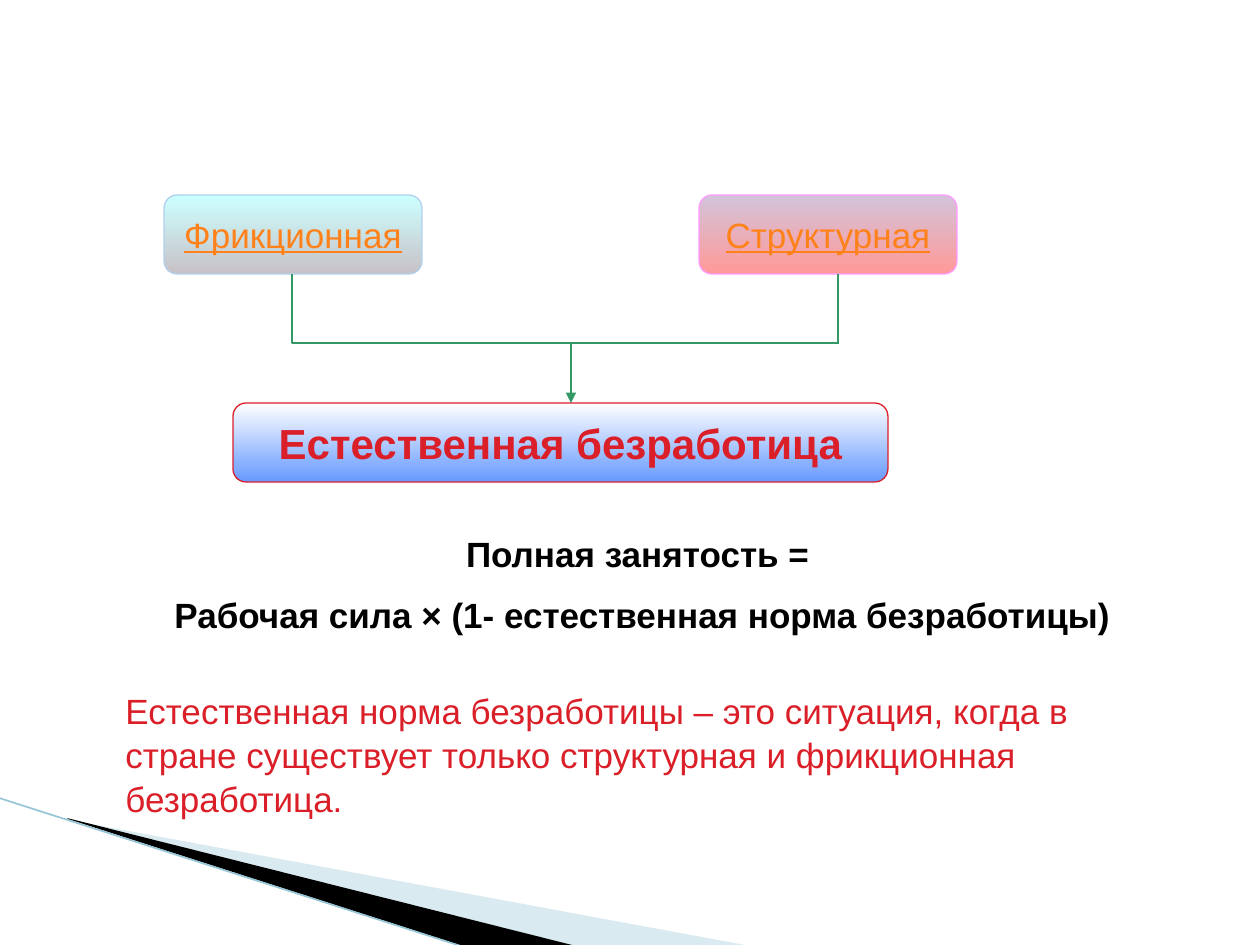
from lxml import etree
from pptx import Presentation
from pptx.dml.color import RGBColor
from pptx.enum.shapes import MSO_CONNECTOR as CONN, MSO_SHAPE as SHAPE
from pptx.enum.text import MSO_ANCHOR as ANCHOR, MSO_AUTO_SIZE as AUTO, PP_ALIGN as ALIGN
from pptx.oxml.ns import qn
from pptx.util import Emu, Pt

SCALE = 914400 / 126
BLACK = RGBColor(0x00, 0x00, 0x00)
WHITE = RGBColor(0xFF, 0xFF, 0xFF)
RED = RGBColor(0xDA, 0x1F, 0x28)
ORANGE = RGBColor(0xFF, 0x81, 0x19)
GREEN = RGBColor(0x33, 0x99, 0x66)
PALE_BLUE = RGBColor(0xA0, 0xCB, 0xDC)
EDGE_BLUE = RGBColor(0x97, 0xC5, 0xD8)
CYAN = RGBColor(0xCC, 0xFF, 0xFF)
GREY = RGBColor(0xC8, 0xC2, 0xC7)
SKY = RGBColor(0xB0, 0xD0, 0xEE)
LILAC = RGBColor(0xD3, 0xC4, 0xDA)
SALMON = RGBColor(0xFF, 0x99, 0x99)
PINK = RGBColor(0xFF, 0x99, 0xFF)
BLUE = RGBColor(0x66, 0x99, 0xFF)


def px(*lengths):
    return [Emu(round(n * SCALE)) for n in lengths]


class Deck:
    """Holds the text style and the current slide, and draws each kind of element."""

    font = "Arial"

    def __init__(self, width, height):
        self.prs = Presentation()
        self.prs.slide_width, self.prs.slide_height = px(width, height)
        self.s = self.prs.slides.add_slide(self.prs.slide_layouts[6])

    def run(self, p, text, color, size=20, bold=False, underline=False):
        r = p.add_run()
        r.text = text
        f = r.font
        f.name, f.size, f.bold, f.underline = self.font, Pt(size), bold, underline
        f.color.rgb = color

    def polygon(self, points, color, alpha=None):
        builder = self.s.shapes.build_freeform(*points[0], scale=SCALE)
        builder.add_line_segments(points[1:], close=True)
        sp = builder.convert_to_shape()
        sp.shadow.inherit = False
        sp.fill.solid()
        sp.fill.fore_color.rgb = color
        sp.line.fill.background()
        if alpha:
            clr = sp._element.spPr.find(".//" + qn("a:srgbClr"))
            etree.SubElement(clr, qn("a:alpha"), val=str(alpha * 1000))

    def line(self, start, end, color=GREEN, width=1.5, arrow=False, kind=CONN.STRAIGHT):
        cxn = self.s.shapes.add_connector(kind, *px(*start, *end))
        cxn.line.color.rgb = color
        cxn.line.width = Pt(width)
        spPr = cxn._element.spPr
        if arrow:
            etree.SubElement(spPr.find(qn("a:ln")), qn("a:tailEnd"), type="triangle")
        etree.SubElement(spPr, qn("a:effectLst"))
        return cxn

    def elbow(self, start, end):
        (x1, y1), (x2, y2) = start, end
        cx, cy = (x1 + x2) / 2, (y1 + y2) / 2
        dx, dy = (y2 - y1) / 2, (x2 - x1) / 2
        cxn = self.line((cx + dx, cy - dy), (cx - dx, cy + dy), kind=CONN.ELBOW)
        spPr = cxn._element.spPr
        spPr.find(qn("a:xfrm")).set("rot", str(270 * 60000))
        spPr.find(qn("a:prstGeom")).set("prst", "bentConnector2")

    def box(self, x, y, w, h, text, colors, edge, color, **style):
        sp = self.s.shapes.add_shape(SHAPE.ROUNDED_RECTANGLE, *px(x, y, w, h))
        sp.shadow.inherit = False
        sp.fill.gradient()
        sp.fill.gradient_angle = 270
        for stop, rgb in zip(sp.fill.gradient_stops, colors):
            stop.color.rgb = rgb
        sp.line.color.rgb = edge
        sp.line.width = Pt(0.75)
        tf = sp.text_frame
        tf.word_wrap = False
        tf.vertical_anchor = ANCHOR.MIDDLE
        p = tf.paragraphs[0]
        p.alignment = ALIGN.CENTER
        self.run(p, text, color, **style)

    def text(self, x, y, w, h, lines, color, align=ALIGN.LEFT, **style):
        tf = self.s.shapes.add_textbox(*px(x, y, w, h)).text_frame
        tf.word_wrap = True
        tf.auto_size = AUTO.SHAPE_TO_FIT_TEXT
        tf.margin_top = px(8)[0]
        for i, line in enumerate(lines):
            p = tf.add_paragraph() if i else tf.paragraphs[0]
            p.alignment = align
            p.line_spacing = 1.05
            if i:
                p.space_before = Pt(10)
            self.run(p, line, color, **style)


def main():
    deck = Deck(1260, 945)
    deck.polygon([(69, 820), (750, 946), (575, 946), (69, 819)], PALE_BLUE, alpha=40)
    deck.polygon([(67, 818), (576, 946), (469, 948), (68, 819)], BLACK)
    deck.line((-1, 798), (467, 948), EDGE_BLUE, 0.95)

    kinds = [
        (164, "Фрикционная", (CYAN, GREY), SKY),
        (699, "Структурная", (LILAC, SALMON), PINK),
    ]
    for x, name, colors, edge in kinds:
        deck.box(x, 195, 258, 79, name, colors, edge, ORANGE, underline=True)

    deck.elbow((292, 274), (839, 343))
    deck.line((838, 344), (838, 274))
    deck.line((571, 344), (571, 403), arrow=True)
    deck.box(233, 403, 655, 79, "Естественная безработица", (WHITE, BLUE), RED, RED,
             size=24, bold=True)

    deck.text(25, 522, 1235, 117,
              ["Полная занятость = ", "Рабочая сила × (1- естественная норма безработицы)"],
              BLACK, ALIGN.CENTER, bold=True)
    deck.text(113, 679, 1022, 139,
              ["Естественная норма безработицы – это ситуация, когда в стране существует "
               "только структурная и фрикционная безработица."], RED)
    deck.prs.save("out.pptx")


if __name__ == "__main__":
    main()
